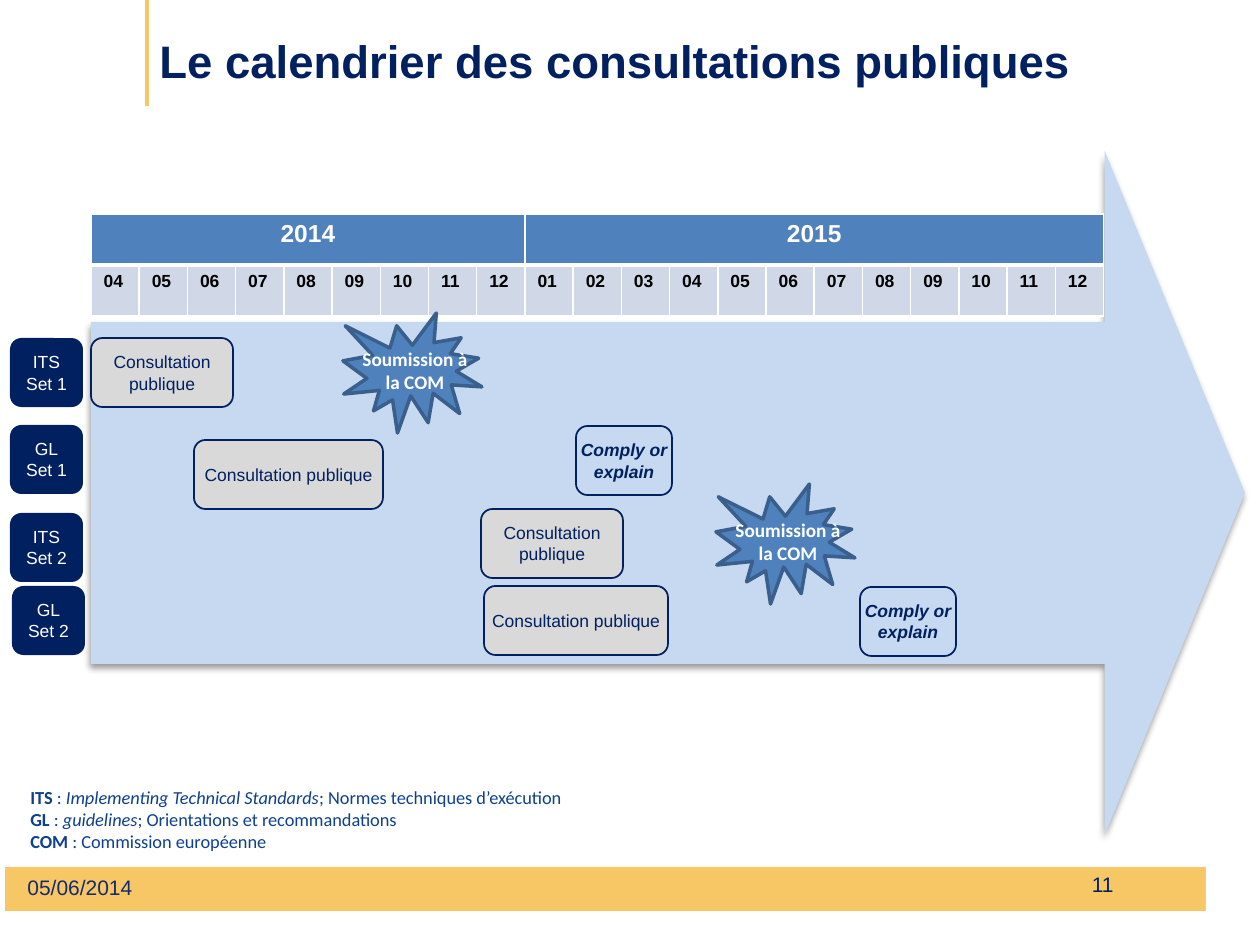
"""Build the timeline slide of public consultations."""
from dataclasses import dataclass

from lxml.etree import SubElement as Sub
from pptx import Presentation
from pptx.dml.color import RGBColor as RGB
from pptx.enum.shapes import MSO_CONNECTOR as Link, MSO_SHAPE as Kind
from pptx.enum.text import MSO_ANCHOR as Anchor, MSO_AUTO_SIZE as Auto, PP_ALIGN as Align
from pptx.oxml.ns import qn
from pptx.util import Pt


@dataclass(frozen=True)
class Theme:
    navy: str = "002060"
    gold: str = "F7C765"
    sky: str = "C6D9F1"
    blue: str = "4F81BD"
    edge: str = "3A5F8C"
    pale: str = "D0D8E8"
    gray: str = "D9D9D9"
    white: str = "FFFFFF"
    black: str = "000000"
    note: str = "0E4090"
    date: str = "162A71"
    sans: str = "Arial"
    body: str = "Calibri"
    title: float = 26
    year: float = 14
    foot: float = 12
    seal: float = 11
    key: float = 10.5
    small: float = 10


def emu(px):
    return round(px * 914400 / 126)


class Deck:
    def __init__(self, theme):
        self.t = theme
        self.prs = Presentation()
        self.prs.slide_width, self.prs.slide_height = emu(1260), emu(945)
        self.slide = self.prs.slides.add_slide(self.prs.slide_layouts[6])

    def font(self, run, size, color, bold=False, italic=False, face=None):
        font = run.font
        font.name, font.size = face or self.t.sans, Pt(size)
        font.bold, font.italic = bold, italic
        font.color.rgb = RGB.from_string(color)

    def label(self, frame, text, size, color, align=Align.LEFT, **style):
        frame.text = text
        for para in frame.paragraphs:
            para.alignment = align
            for run in para.runs:
                self.font(run, size, color, **style)

    def shape(self, kind, area, fill=None, line=None, width=1, home=None):
        shape = (home or self.slide).shapes.add_shape(kind, *map(emu, area))
        shape.shadow.inherit = False
        if fill:
            shape.fill.solid()
            shape.fill.fore_color.rgb = RGB.from_string(fill)
        else:
            shape.fill.background()
        if line:
            shape.line.color.rgb = RGB.from_string(line)
            shape.line.width = Pt(width)
        else:
            shape.line.fill.background()
        return shape

    def box(self, area, text, color, fill=None, line=None, **style):
        frame = self.shape(Kind.ROUNDED_RECTANGLE, area, fill, line).text_frame
        frame.margin_left = frame.margin_right = 0
        frame.margin_top = frame.margin_bottom = 0
        frame.word_wrap, frame.vertical_anchor = True, Anchor.MIDDLE
        self.label(frame, text, self.t.small, color, Align.CENTER, **style)

    def text(self, area, text, size, color, align=Align.LEFT, anchor=Anchor.TOP,
             grow=False, home=None, **style):
        frame = (home or self.slide).shapes.add_textbox(*map(emu, area)).text_frame
        frame.word_wrap, frame.vertical_anchor = True, anchor
        if grow:
            frame.auto_size = Auto.SHAPE_TO_FIT_TEXT
        self.label(frame, text, size, color, align, **style)
        return frame

    def line(self, x, top, end, color, width):
        line = self.slide.shapes.add_connector(Link.STRAIGHT, *map(emu, (x, top, x, end)))
        line.line.color.rgb, line.line.width = RGB.from_string(color), Pt(width)
        Sub(line._element.spPr, qn("a:effectLst"))

    def arrow(self, area, fill):
        arrow = self.shape(Kind.RIGHT_ARROW, area, fill)
        arrow.adjustments[0], arrow.adjustments[1] = 0.5, 0.205
        glow = Sub(arrow._element.spPr.find(qn("a:effectLst")), qn("a:outerShdw"),
                   blurRad=str(Pt(4)), dist=str(Pt(3)), dir="5400000", rotWithShape="0")
        tone = Sub(glow, qn("a:srgbClr"), val=self.t.black)
        Sub(tone, qn("a:alpha"), val="40000")

    def seal(self, x, y, text):
        t = self.t
        group = self.slide.shapes.add_group_shape()
        self.shape(Kind.EXPLOSION1, (x, y, 139, 120), t.blue, t.edge, 2, group)
        self.text((x + 5, y + 28, 134, 59), text, t.seal, t.white, Align.CENTER,
                  grow=True, home=group, bold=True, face=t.body)

    def cell(self, cell, fill, thick):
        props = cell._tc.get_or_add_tcPr()
        for side in "LRTB":
            edge = Sub(props, qn("a:ln" + side), w=str(Pt(3 if side == thick else 1)))
            Sub(Sub(edge, qn("a:solidFill")), qn("a:srgbClr"), val=self.t.white)
        cell.fill.solid()
        cell.fill.fore_color.rgb = RGB.from_string(fill)

    def table(self, area, years):
        t = self.t
        months = [f"{m:02}" for _, first in years for m in range(first, 13)]
        grid = self.slide.shapes.add_table(2, len(months), *map(emu, area)).table
        for row in grid.rows:
            row.height = emu(area[3]) // 2
        for col, month in enumerate(months):
            grid.columns[col].width = emu(area[2]) // len(months)
            self.cell(grid.cell(0, col), t.blue, "B")
            self.cell(grid.cell(1, col), t.pale, "T")
            self.label(grid.cell(1, col).text_frame, month, t.small, t.black, bold=True)
        col = 0
        for year, first in years:
            last = col + 12 - first
            head = grid.cell(0, col)
            head.merge(grid.cell(0, last))
            self.label(head.text_frame, year, t.year, t.white, Align.CENTER, bold=True)
            col = last + 1

    def legend(self, area, rows):
        t = self.t
        frame = self.text(area, "\n".join(row[0] for row in rows), t.key, t.note,
                          grow=True, bold=True, face=t.body)
        for para, row in zip(frame.paragraphs, rows):
            for part, slant in zip(row[1:], (False, True, False)):
                run = para.add_run()
                run.text = part
                self.font(run, t.key, t.note, italic=slant, face=t.body)


def main():
    t = Theme()
    deck = Deck(t)
    deck.shape(Kind.RECTANGLE, (5, 867, 1230, 44), t.gold)
    deck.line(147, 0, 106, t.gold, 2.75)
    deck.shape(Kind.RECTANGLE, (1206, 849, 35, 83), t.white)
    deck.text((147, -4, 1113, 129), "Le calendrier des consultations publiques",
              t.title, t.navy, anchor=Anchor.MIDDLE, bold=True)
    deck.arrow((91, 151, 1154, 684), t.sky)
    for x, y, name in ((10, 338, "ITS\nSet 1"), (10, 425, "GL\nSet 1"),
                       (10, 513, "ITS\nSet 2"), (12, 586, "GL\nSet 2")):
        deck.box((x, y, 73, 69), name, t.white, t.navy)
    deck.table((91, 214, 1013, 102), (("2014", 4), ("2015", 1)))
    for x, y, wide in ((91, 338, 142), (194, 440, 189), (481, 509, 142), (484, 586, 184)):
        deck.box((x, y, wide, 69), "Consultation publique", t.navy, t.gray, t.navy)
    for x, y in ((576, 426), (860, 587)):
        deck.box((x, y, 96, 69), "Comply or explain", t.navy, line=t.navy,
                 bold=True, italic=True)
    for x, y in ((343, 313), (716, 484)):
        deck.seal(x, y, "Soumission à la COM")
    deck.legend((18, 780, 1196, 79), (
        ("ITS ", ": ", "Implementing Technical Standards", "; Normes techniques d’exécution"),
        ("GL ", ": ", "guidelines", "; Orientations et recommandations"),
        ("COM ", ": Commission européenne")))
    deck.text((832, 859, 294, 50), "11", t.foot, t.navy, Align.RIGHT, Anchor.MIDDLE)
    deck.text((15, 868, 294, 40), "05/06/2014", t.foot, t.date)
    deck.prs.save("out.pptx")


if __name__ == "__main__":
    main()
